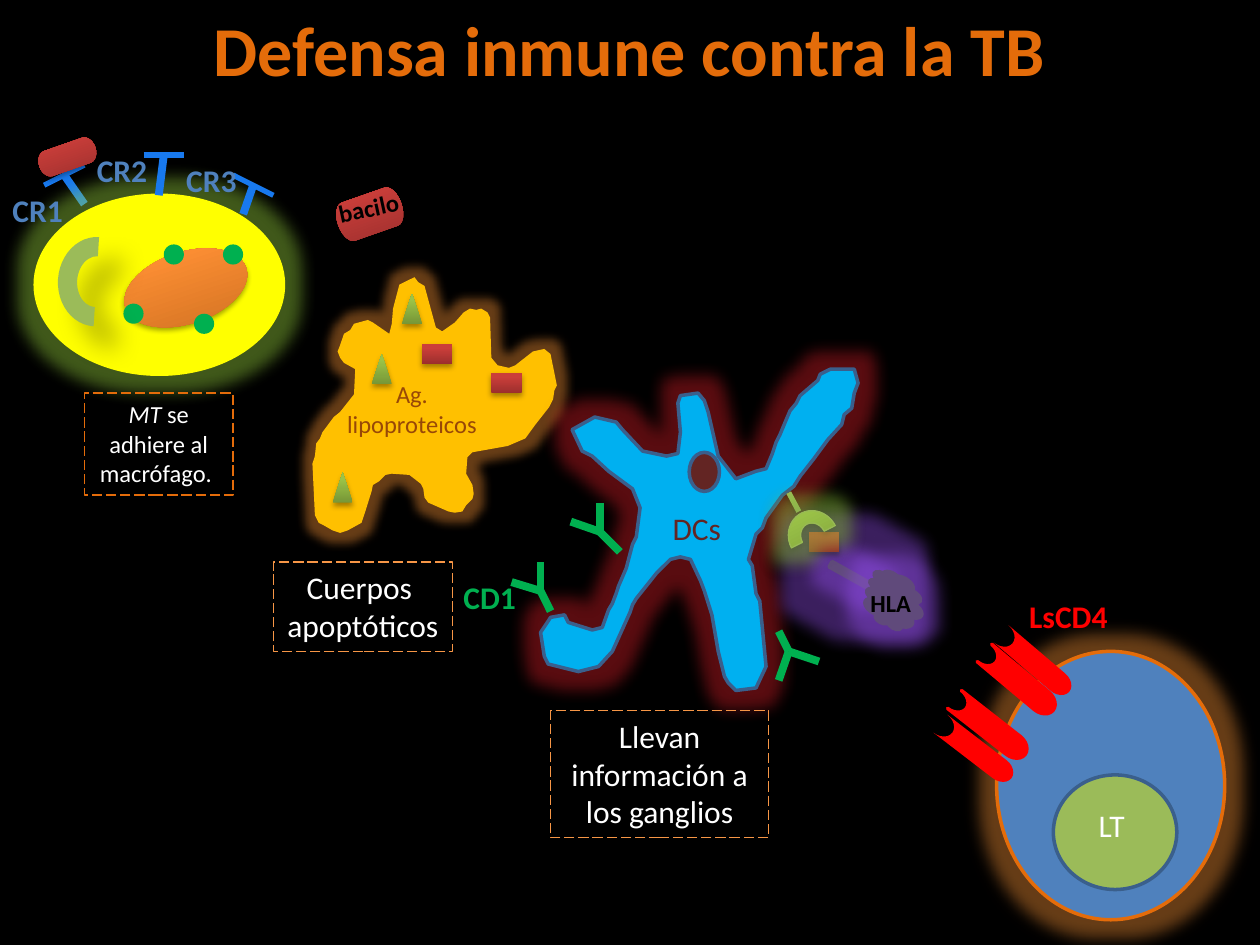
from dataclasses import dataclass
from typing import Optional

from lxml import etree
from pptx import Presentation
from pptx.dml.color import RGBColor
from pptx.enum import dml, shapes, text
from pptx.oxml import ns
from pptx.util import Inches, Pt

Kind = shapes.MSO_SHAPE
BLACK, WHITE = RGBColor(0, 0, 0), RGBColor(255, 255, 255)
ORANGE, PEACH = RGBColor(0xE4, 0x6C, 0x0A), RGBColor(0xF7, 0x96, 0x46)
YELLOW, GOLD = RGBColor(255, 255, 0), RGBColor(255, 0xC0, 0)
BLUE, SKY = RGBColor(0x4F, 0x81, 0xBD), RGBColor(0, 0xB0, 0xF0)
NAVY, AZURE = RGBColor(0x3A, 0x5F, 0x8C), RGBColor(0x18, 0x79, 0xEE)
GREEN, OLIVE = RGBColor(0, 0xB0, 0x50), RGBColor(0x9B, 0xBB, 0x59)
RED, WINE = RGBColor(255, 0, 0), RGBColor(0x63, 0x25, 0x23)
PURPLE, BROWN = RGBColor(0x60, 0x4A, 0x7B), RGBColor(0x98, 0x48, 0x07)
LEAF = RGBColor(0x98, 0xB9, 0x55)
RUST = [RGBColor(0xCC, 0x6E, 0x20), RGBColor(0xFF, 0x90, 0x34)]
BRICK = [RGBColor(0x9C, 0x2F, 0x2D), RGBColor(0xCB, 0x3E, 0x3A)]
MOSS = [RGBColor(0x77, 0x97, 0x37), RGBColor(0x9B, 0xC3, 0x48)]
LIME_GLOW, AMBER_GLOW = RGBColor(0xA0, 0xDE, 0x41), RGBColor(0xFF, 0x98, 0x38)
RED_GLOW, VIOLET_GLOW = RGBColor(0xE0, 0x1E, 0x28), RGBColor(0x96, 0x50, 0xF0)


@dataclass
class Shade:
    alpha: int
    blur: float
    dist: float
    angle: int


@dataclass
class Glow:
    color: RGBColor
    size: float = 18


@dataclass
class Look:
    fill: object = None  # a colour, or a list of two colours for a gradient
    line: Optional[RGBColor] = None
    width: float = 2
    dash: bool = False
    shade: Optional[Shade] = None
    glow: Optional[Glow] = None


SOFT, DEEP = Shade(35, 3.1, 1.8, 90), Shade(30, 15, 18, 45)
GERM = Look(BRICK, shade=SOFT)
LIPID = Look(MOSS, shade=SOFT)

# Outlines in hundredths of an inch
BODY = [
    (309, 265), (296, 256), (292, 254), (281, 257), (278, 262), (273, 265), (270, 274), (268, 279),
    (270, 284), (273, 288), (282, 293), (281, 313), (270, 327), (265, 331), (256, 343), (254, 348),
    (251, 352), (250, 362), (248, 368), (250, 409), (253, 415), (257, 417), (264, 421), (270, 423),
    (276, 421), (287, 415), (290, 406), (295, 390), (296, 385), (301, 382), (306, 377), (311, 376),
    (325, 377), (334, 384), (336, 388), (337, 395), (340, 399), (356, 406), (361, 407), (367, 406),
    (370, 401), (375, 396), (376, 392), (375, 385), (370, 376), (371, 363), (375, 359), (403, 354),
    (417, 348), (425, 337), (436, 323), (439, 317), (440, 310), (442, 306), (437, 281), (432, 277),
    (423, 279), (409, 290), (404, 292), (395, 290), (390, 284), (389, 252), (387, 248), (382, 245),
    (378, 246), (373, 245), (368, 248), (361, 256), (351, 263), (346, 260), (340, 238), (337, 227),
    (332, 224), (329, 220), (317, 226), (312, 245), (311, 257)]
DENDRITE = [
    (462, 358), (470, 362), (483, 374), (502, 388), (508, 403), (505, 426), (502, 432), (497, 451),
    (491, 465), (489, 471), (486, 479), (483, 484), (478, 498), (470, 500), (451, 494), (448, 488),
    (437, 490), (429, 502), (432, 521), (435, 527), (451, 531), (459, 533), (475, 529), (486, 517),
    (491, 506), (500, 486), (502, 480), (505, 475), (521, 455), (527, 449), (532, 444), (540, 442),
    (548, 444), (556, 461), (559, 469), (565, 488), (570, 517), (575, 537), (578, 542), (584, 548),
    (600, 546), (608, 529), (603, 477), (600, 471), (597, 449), (594, 444), (600, 424), (605, 419),
    (608, 411), (621, 393), (630, 386), (635, 378), (646, 364), (657, 349), (668, 337), (670, 329),
    (676, 324), (678, 312), (681, 304), (678, 293), (659, 293), (651, 297), (649, 302), (635, 314),
    (632, 320), (627, 326), (624, 333), (619, 345), (616, 351), (613, 360), (608, 372), (600, 374),
    (584, 380), (570, 362), (562, 327), (559, 318), (554, 312), (540, 314), (538, 320), (540, 343),
    (538, 360), (529, 362), (510, 358), (494, 341), (489, 335), (472, 331), (454, 341)]

deck = Presentation()
deck.slide_width, deck.slide_height = Inches(10), Inches(7.5)
slide = deck.slides.add_slide(deck.slide_layouts[6])
slide.background.fill.solid()
slide.background.fill.fore_color.rgb = BLACK


def effect(props, look: Look) -> None:
    """Fill the shape's effect list with its glow and shadow."""
    box = props.find(ns.qn("a:effectLst"))
    if box is None:
        box = etree.SubElement(props, ns.qn("a:effectLst"))

    def add(tag: str, color: RGBColor, alpha: int, **attrs: int) -> None:
        node = etree.SubElement(box, ns.qn(tag), {k: str(int(v)) for k, v in attrs.items()})
        tint = etree.SubElement(node, ns.qn("a:srgbClr"), val=str(color))
        etree.SubElement(tint, ns.qn("a:alpha"), val=str(alpha * 1000))

    if look.glow:
        add("a:glow", look.glow.color, 40, rad=Pt(look.glow.size))
    if look.shade:
        s = look.shade
        add("a:outerShdw", BLACK, s.alpha, blurRad=Pt(s.blur), dist=Pt(s.dist),
            dir=s.angle * 60000, rotWithShape=0)


def style(item, look: Look):
    item.shadow.inherit = False
    if isinstance(look.fill, list):
        item.fill.gradient()
        item.fill.gradient_angle = 90
        for stop, color, place in zip(item.fill.gradient_stops, look.fill, (0, 0.8)):
            stop.color.rgb, stop.position = color, place
    elif look.fill is None:
        item.fill.background()
    else:
        item.fill.solid()
        item.fill.fore_color.rgb = look.fill
    if look.line is None:
        item.line.fill.background()
    else:
        item.line.color.rgb = look.line
        item.line.width = Pt(look.width)
        if look.dash:
            item.line.dash_style = dml.MSO_LINE.LONG_DASH
    effect(item._element.spPr, look)
    return item


def shape(kind, x: float, y: float, w: float, h: float, look: Look, turn: float = 0):
    item = slide.shapes.add_shape(kind, Inches(x), Inches(y), Inches(w), Inches(h))
    item.rotation = turn
    return style(item, look)


def blob(points: list, look: Look) -> None:
    pen = slide.shapes.build_freeform(*points[0], scale=Inches(0.01))
    pen.add_line_segments(points[1:], close=True)
    style(pen.convert_to_shape(), look)


def line(x1: float, y1: float, x2: float, y2: float, color: RGBColor, width: float = 4.5,
         look: Look = Look()) -> None:
    item = slide.shapes.add_connector(shapes.MSO_CONNECTOR.STRAIGHT, *map(Inches, (x1, y1, x2, y2)))
    item.line.color.rgb, item.line.width = color, Pt(width)
    effect(item._element.spPr, look)


def fork(x: float, y: float, *tips: tuple) -> None:
    """Draw a Y receptor from its hub and the offsets of its tips."""
    for dx, dy in tips:
        line(x, y, x + dx, y + dy, GREEN)


def write(words: str, x: float, y: float, w: float, h: float, color: RGBColor, size: int = 18,
          bold: bool = False, mid: bool = False, turn: float = 0, wrap: bool = True,
          edge: Optional[RGBColor] = None) -> None:
    """Write paragraphs split by newlines; text between stars is italic; edge adds a dashed frame."""
    if edge:
        item = shape(Kind.RECTANGLE, x, y, w, h, Look(line=edge, width=0.75, dash=True))
    else:
        item = slide.shapes.add_textbox(Inches(x), Inches(y), Inches(w), Inches(h))
    item.rotation = turn
    frame = item.text_frame
    frame.word_wrap, frame.vertical_anchor = wrap, text.MSO_ANCHOR.TOP
    frame.auto_size = text.MSO_AUTO_SIZE.SHAPE_TO_FIT_TEXT
    for i, part in enumerate(words.split("\n")):
        para = frame.add_paragraph() if i else frame.paragraphs[0]
        para.alignment = text.PP_ALIGN.CENTER if mid else text.PP_ALIGN.LEFT
        for j, bit in enumerate(part.split("*")):
            if bit:
                run = para.add_run()
                run.text, font = bit, run.font
                font.name, font.size, font.bold = "Calibri", Pt(size), bold
                font.italic, font.color.rgb = j % 2 == 1, color


write("Defensa inmune contra la TB", 0.43, 0, 9.13, 0.77, ORANGE, 40, bold=True, mid=True)

# Macrophage
line(0.67, 1.62, 0.51, 1.39, AZURE)
line(0.35, 1.47, 0.67, 1.31, AZURE, 3)
shape(Kind.OVAL, 0.28, 1.55, 1.97, 1.42, Look(YELLOW, YELLOW, glow=Glow(LIME_GLOW)))
line(1.26, 1.55, 1.3, 1.23, AZURE)
line(1.14, 1.23, 1.46, 1.23, AZURE, 3)
line(1.85, 1.39, 2.17, 1.55, AZURE, 3)
line(1.93, 1.7, 2.01, 1.47, AZURE)
shape(Kind.OVAL, 0.97, 2, 1.01, 0.57, Look(RUST, shade=SOFT), 341.7)
for x, y, w, h in ((2.67, 1.54, 0.53, 0.32), (0.3, 1.14, 0.47, 0.21)):
    shape(Kind.FLOWCHART_TERMINATOR, x, y, w, h, GERM, 340.7)
for x, y in ((1.54, 2.49), (1.77, 1.94), (1.3, 1.94), (0.98, 2.41)):
    shape(Kind.OVAL, x, y, 0.16, 0.16, Look(GREEN))
for name, x, y, w, wrap in (("CR1", 0, 1.47, 0.98, True), ("CR2", 0.67, 1.15, 0.71, True),
                            ("CR3", 1.38, 1.23, 0.6, False)):
    write(name, x, y, w, 0.4, BLUE, bold=True, wrap=wrap)
shape(Kind.BLOCK_ARC, 0.41, 1.93, 0.71, 0.61, Look(OLIVE, shade=DEEP), 273.5)
write("*MT *se adhiere al macrófago. ", 0.67, 3.12, 1.18, 0.81, WHITE, 14, mid=True, edge=ORANGE)
write("bacilo", 2.58, 1.43, 1.18, 0.34, BLACK, 14, bold=True, turn=347.8)

# Apoptotic body
blob(BODY, Look(GOLD, shade=Shade(32, 3.5, 2.2, 90), glow=Glow(AMBER_GLOW, 11)))
for x, y in ((2.95, 2.81), (2.64, 3.75), (3.19, 2.33)):
    shape(Kind.ISOSCELES_TRIANGLE, x, y, 0.16, 0.24, LIPID)
for x, y in ((3.35, 2.73), (3.9, 2.96)):
    shape(Kind.FLOWCHART_PROCESS, x, y, 0.24, 0.16, GERM)

# Dendritic cell
blob(DENDRITE, Look(SKY, NAVY, glow=Glow(RED_GLOW)))
shape(Kind.OVAL, 5.47, 3.59, 0.24, 0.31, Look(WINE, NAVY))
fork(4.29, 4.69, (0.08, 0.16), (0, -0.23), (-0.23, -0.07))
fork(4.76, 4.22, (0.16, 0.16), (0, -0.23), (-0.23, -0.08))
fork(6.26, 5.17, (-0.08, -0.16), (-0.08, 0.23), (0.24, 0.08))
line(6.26, 3.91, 6.34, 4.06, OLIVE, 3, Look(shade=SOFT))
shape(Kind.RECTANGLE, 6.75, 4.37, 0.05, 0.42, Look(PURPLE, PURPLE, glow=Glow(VIOLET_GLOW)), 299.2)
shape(Kind.CLOUD, 6.88, 4.51, 0.43, 0.52, Look(PURPLE, glow=Glow(VIOLET_GLOW)), 299.2)
shape(Kind.FLOWCHART_PROCESS, 6.42, 4.22, 0.24, 0.16, GERM)
write("HLA", 6.81, 4.62, 0.55, 0.34, BLACK, 14, bold=True)
write("CD1", 3.58, 4.54, 0.71, 0.4, GREEN, bold=True)
write("Ag. lipoproteicos", 2.64, 2.96, 1.26, 0.57, BROWN, 14, mid=True)
write("DCs", 5.24, 3.99, 0.63, 0.4, WINE)

# T lymphocyte
shape(Kind.OVAL, 7.91, 5.17, 1.81, 2.13, Look(BLUE, ORANGE, glow=Glow(AMBER_GLOW)))
shape(Kind.OVAL, 8.36, 6.15, 0.98, 0.91, Look(OLIVE, NAVY))
write("LT", 8.62, 6.35, 1.11, 0.4, WHITE)
for x, y, turn, edge in ((7.39, 5.87, 217.5, None), (7.5, 5.68, 218, RED),
                         (7.73, 5.32, 220, RED), (7.86, 5.17, 220.4, None)):
    shape(Kind.FLOWCHART_STORED_DATA, x, y, 0.71, 0.18, Look(RED, edge), turn)
shape(Kind.BLOCK_ARC, 6.26, 4.05, 0.39, 0.42,
      Look(MOSS, LEAF, 0.75, shade=SOFT, glow=Glow(LIME_GLOW)), 332.9)
write("LsCD4", 8.07, 4.69, 0.94, 0.4, RED, bold=True)

write("Cuerpos \napoptóticos", 2.17, 4.46, 1.42, 0.71, WHITE, mid=True, edge=PEACH)
write("Llevan información a los ganglios", 4.37, 5.64, 1.73, 1.01, WHITE, mid=True, edge=PEACH)

deck.save("out.pptx")
